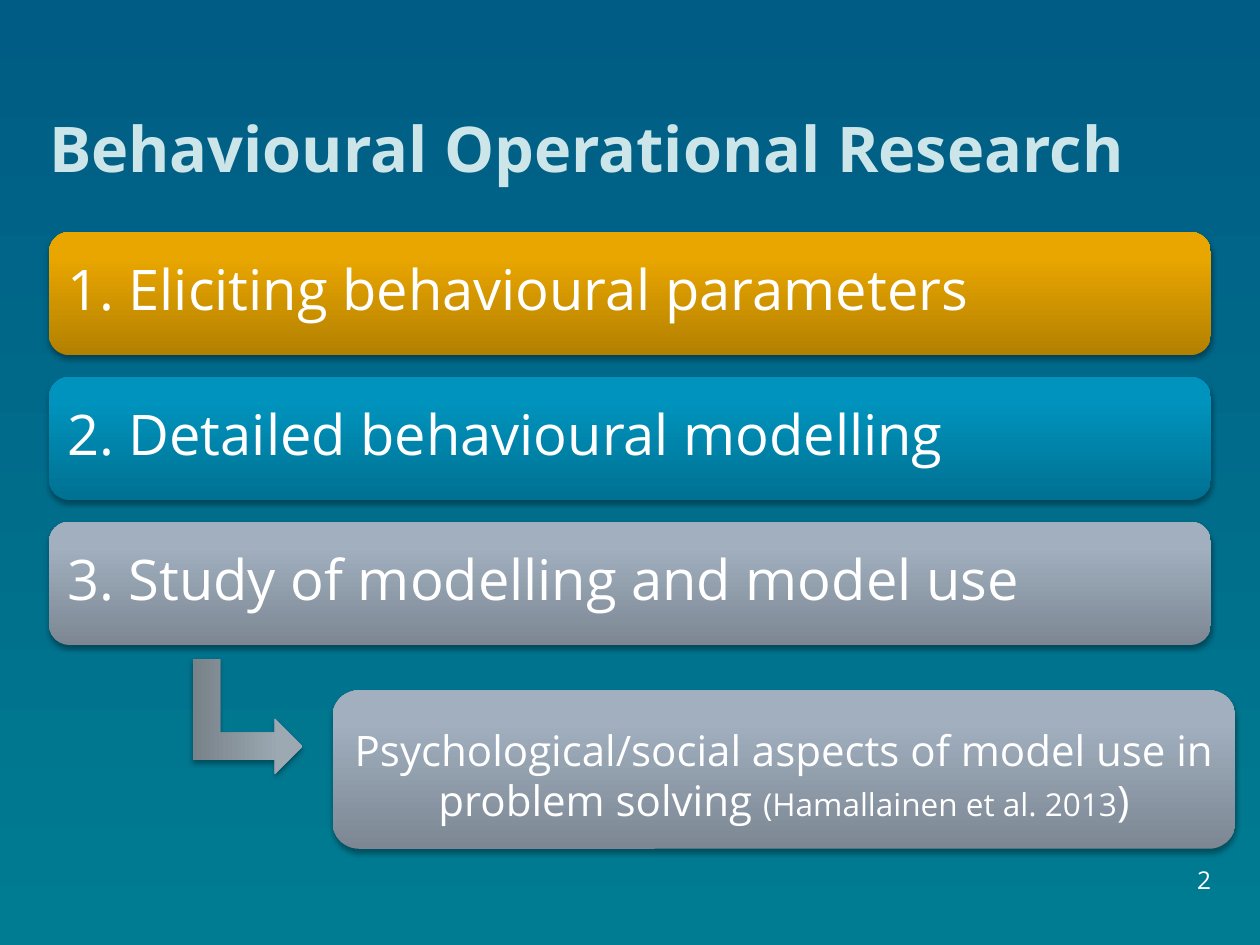
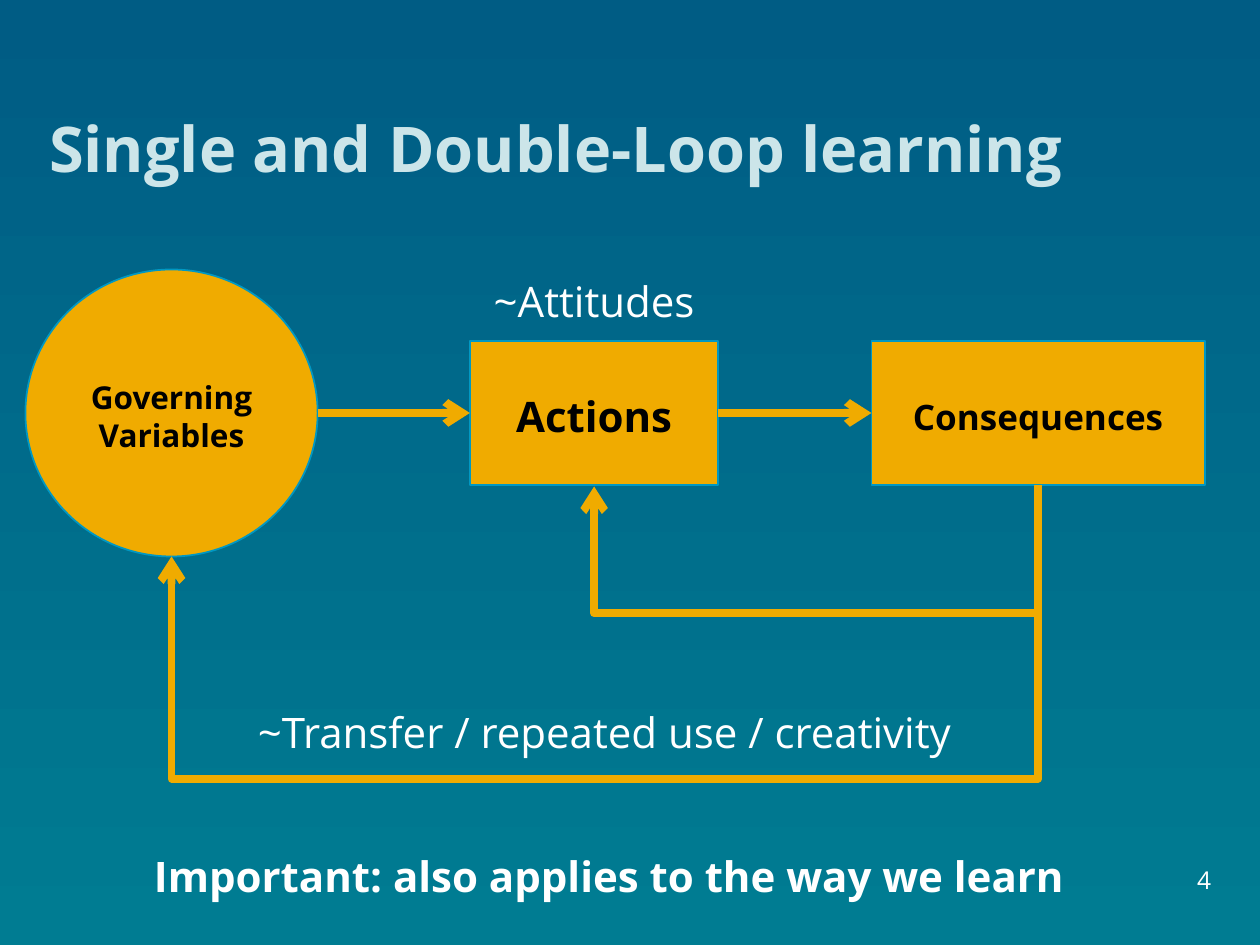
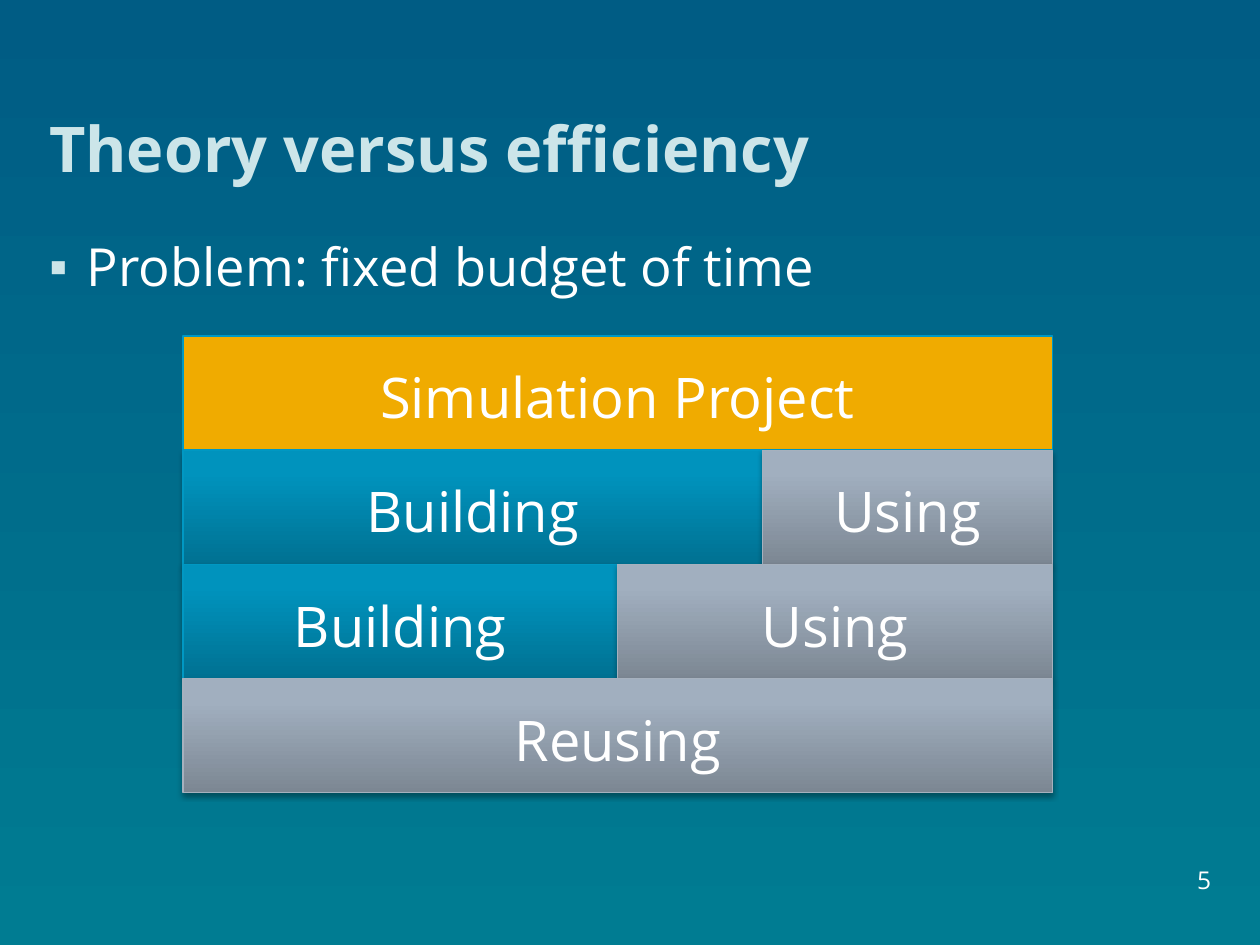
from lxml.etree import SubElement
from pptx import Presentation
from pptx.dml.color import RGBColor
from pptx.enum.shapes import MSO_CONNECTOR, MSO_SHAPE
from pptx.enum.text import MSO_ANCHOR, PP_ALIGN
from pptx.oxml.ns import qn
from pptx.util import Pt

FONT = "Open Sans"
WHITE = RGBColor(0xFF, 0xFF, 0xFF)
BLACK = RGBColor(0x00, 0x00, 0x00)
MIST = RGBColor(0xCC, 0xE5, 0xE9)
AMBER = RGBColor(0xF0, 0xAB, 0x00)
CYAN = RGBColor(0x00, 0x98, 0xC3)
SILVER = RGBColor(0xA6, 0xB1, 0xBE)
BACKDROP = RGBColor(0x00, 0x5C, 0x84), RGBColor(0x00, 0x7C, 0x92)

# Gradients run from the dark bottom edge to the light top
GOLD_FADE = RGBColor(0xB3, 0x80, 0x00), RGBColor(0xE9, 0xA6, 0x00)
BLUE_FADE = RGBColor(0x00, 0x71, 0x92), RGBColor(0x00, 0x93, 0xBD)
GREY_FADE = RGBColor(0x7C, 0x87, 0x93), RGBColor(0xA1, 0xAF, 0xBF)
ARROW_FADE = RGBColor(0x78, 0x82, 0x89), RGBColor(0x9C, 0xA9, 0xB2)

MARGIN, CONTENT_WIDTH = 28, 664
TITLE_ONLY, TITLE_AND_CONTENT = 5, 1
BLOCK_INSETS = (7.2, 3.6, 7.2, 0)
CAPTION_INSETS = (7.2, 3.6, 7.2, 3.6)

THEMES = [
    ("1. Eliciting behavioural parameters", GOLD_FADE),
    ("2. Detailed behavioural modelling", BLUE_FADE),
    ("3. Study of modelling and model use", GREY_FADE),
]
FOCUS = [
    ("Psychological/social aspects of model use in problem solving ", 24),
    ("(Hamallainen et al. 2013", 18),
    (")", 24),
]

# label, size, shape, (left, top, width, height)
LOOP_NODES = [
    ("Governing Variables", 18, MSO_SHAPE.OVAL, (14.5, 154, 167, 164)),
    ("Actions", 24, MSO_SHAPE.RECTANGLE, (268.5, 195, 142, 82)),
    ("Consequences", 20, MSO_SHAPE.RECTANGLE, (498, 195, 190.5, 82)),
]
# text, bold, (left, top, width, height)
LOOP_CAPTIONS = [
    ("~Attitudes", False, (268.5, 154, 142, 36)),
    ("~Transfer / repeated use / creativity", False, (124.5, 400, 442, 36)),
    ("Important: also applies to the way we learn", True, (24, 482.5, 648, 36)),
]
SINGLE_LOOP_DROP, DOUBLE_LOOP_DROP = 74, 168

PROBLEM = "Problem: fixed budget of time"
# each row: label, fill, line, line width, share of the row
BUDGET_ROWS = [
    [("Simulation Project", AMBER, CYAN, 1, 1)],
    [("Building", BLUE_FADE, CYAN, 0.75, 2 / 3), ("Using", GREY_FADE, SILVER, 0.75, 1 / 3)],
    [("Building", BLUE_FADE, CYAN, 0.75, 1 / 2), ("Using", GREY_FADE, SILVER, 0.75, 1 / 2)],
    [("Reusing", GREY_FADE, SILVER, 0.75, 1)],
]


def place(shape, box):
    shape.left, shape.top, shape.width, shape.height = map(Pt, box)


def write(shape, parts, color=WHITE, bold=False, align=PP_ALIGN.CENTER,
          anchor=MSO_ANCHOR.MIDDLE, insets=(0, 0, 0, 0)):
    """Fill the shape with one paragraph made of (text, size) parts."""
    frame = shape.text_frame
    frame.word_wrap = True
    frame.vertical_anchor = anchor
    (frame.margin_left, frame.margin_top,
     frame.margin_right, frame.margin_bottom) = map(Pt, insets)
    paragraph = frame.paragraphs[0]
    paragraph.alignment = align
    for text, size in parts:
        run = paragraph.add_run()
        run.text = text
        run.font.name, run.font.size, run.font.bold = FONT, Pt(size), bold
        run.font.color.rgb = color


def fade(fill, colors, angle, end=1):
    fill.gradient()
    fill.gradient_angle = angle
    for stop, color, position in zip(fill.gradient_stops, colors, (0, end)):
        stop.color.rgb = color
        stop.position = position


def cast_shadow(shape):
    effects = shape._element.spPr.find(qn("a:effectLst"))
    shadow = SubElement(effects, qn("a:outerShdw"), blurRad=str(Pt(3.1)),
                        dist=str(Pt(1.8)), dir="5400000", rotWithShape="0")
    color = SubElement(shadow, qn("a:srgbClr"), val="000000")
    SubElement(color, qn("a:alpha"), val="35000")


def add_block(slide, kind, box, fill, line=None, line_width=1):
    """Add a shape: a plain colour lies flat, a fade casts a shadow."""
    block = slide.shapes.add_shape(kind, *map(Pt, box))
    block.shadow.inherit = False
    if isinstance(fill, RGBColor):
        block.fill.solid()
        block.fill.fore_color.rgb = fill
    else:
        fade(block.fill, fill, 90, 0.8)
        cast_shadow(block)
    if line is None:
        block.line.fill.background()
    else:
        block.line.color.rgb = line
        block.line.width = Pt(line_width)
    return block


def add_caption(slide, text, size, box, **style):
    caption = slide.shapes.add_textbox(*map(Pt, box))
    write(caption, [(text, size)], **style)


def add_arrow(slide, kind, start, end):
    arrow = slide.shapes.add_connector(kind, *map(Pt, (*start, *end)))
    arrow.line.color.rgb = AMBER
    arrow.line.width = Pt(4.5)
    SubElement(arrow.line._get_or_add_ln(), qn("a:tailEnd"), type="arrow")
    SubElement(arrow._element.spPr, qn("a:effectLst"))
    return arrow


def add_loop(slide, start, end, drop):
    """Lead an arrow down by drop, left, and up to the end point."""
    rise, span = end[1] - start[1], start[0] - end[0]
    x, y = (start[0] + end[0]) / 2, (start[1] + end[1]) / 2
    loop = add_arrow(slide, MSO_CONNECTOR.ELBOW, (x - rise / 2, y - span / 2),
                     (x + rise / 2, y + span / 2))
    properties = loop._element.spPr
    properties.find(qn("a:xfrm")).set("rot", "5400000")
    adjustments = properties.find(qn("a:prstGeom")).find(qn("a:avLst"))
    SubElement(adjustments, qn("a:gd"), name="adj1",
               fmla=f"val {round(drop / rise * 100000)}")


def add_slide(deck, title, number, layout=TITLE_ONLY):
    slide = deck.slides.add_slide(deck.slide_layouts[layout])
    place(slide.shapes.title, (MARGIN, 0, CONTENT_WIDTH, 106))
    write(slide.shapes.title, [(title, 36)], MIST, True, PP_ALIGN.LEFT, MSO_ANCHOR.BOTTOM)
    add_caption(slide, number, 14, (541.5, 497, 150.5, 14.4),
                align=PP_ALIGN.RIGHT, anchor=MSO_ANCHOR.BOTTOM)
    return slide


def build_research(deck):
    slide = add_slide(deck, "Behavioural Operational Research", "2")
    for index, (theme, colors) in enumerate(THEMES):
        box = (MARGIN, 132.5 + index * 82.8, CONTENT_WIDTH, 70.5)
        card = add_block(slide, MSO_SHAPE.ROUNDED_RECTANGLE, box, colors)
        write(card, [(theme, 32)], align=PP_ALIGN.LEFT, insets=(7.2, 0, 7.2, 6))
    arrow = add_block(slide, MSO_SHAPE.BENT_UP_ARROW, (108.7, 378, 65.5, 62.6), ARROW_FADE)
    arrow.rotation = 90
    focus = add_block(slide, MSO_SHAPE.ROUNDED_RECTANGLE, (190, 394.5, 516, 90.5), GREY_FADE)
    write(focus, FOCUS, insets=(7.2, 5.8, 7.2, 0))


def build_learning(deck):
    slide = add_slide(deck, "Single and Double-Loop learning", "4")
    for label, size, kind, box in LOOP_NODES:
        node = add_block(slide, kind, box, AMBER, CYAN)
        write(node, [(label, size)], BLACK, True, insets=BLOCK_INSETS)

    boxes = [box for *_, box in LOOP_NODES]
    for (left, top, width, height), target in zip(boxes, boxes[1:]):
        middle = top + height / 2
        add_arrow(slide, MSO_CONNECTOR.STRAIGHT, (left + width, middle), (target[0], middle))

    variables, actions, consequences = [
        (left + width / 2, top + height) for left, top, width, height in boxes]
    # The elbow needs some height, so the inner loop ends one point lower
    add_loop(slide, consequences, (actions[0], actions[1] + 1), SINGLE_LOOP_DROP)
    add_loop(slide, consequences, variables, DOUBLE_LOOP_DROP)
    for text, bold, box in LOOP_CAPTIONS:
        add_caption(slide, text, 24, box, bold=bold, insets=CAPTION_INSETS)


def build_efficiency(deck):
    slide = add_slide(deck, "Theory versus efficiency", "5", TITLE_AND_CONTENT)
    problem = slide.placeholders[1]
    place(problem, (MARGIN, 134, CONTENT_WIDTH, 354))
    write(problem, [(PROBLEM, 30)], align=PP_ALIGN.LEFT, anchor=MSO_ANCHOR.TOP)
    paragraph = problem.text_frame.paragraphs[0]
    paragraph.space_before = Pt(0)
    properties = paragraph._p.get_or_add_pPr()
    properties.set("marL", str(Pt(21.6)))
    properties.set("indent", str(-Pt(21.6)))
    bullet_color = SubElement(properties, qn("a:buClr"))
    SubElement(bullet_color, qn("a:srgbClr"), val=str(MIST))
    SubElement(properties, qn("a:buChar"), char="▪")

    row_height, stack_width = 65.2, 497
    for index, row in enumerate(BUDGET_ROWS):
        left = 104.5
        for label, fill, line, line_width, share in row:
            width = stack_width * share
            box = (left, 192.2 + index * row_height, width, row_height)
            block = add_block(slide, MSO_SHAPE.RECTANGLE, box, fill, line, line_width)
            write(block, [(label, 32)], insets=BLOCK_INSETS)
            left += width


def main():
    deck = Presentation()
    deck.slide_width, deck.slide_height = Pt(720), Pt(540)
    fade(deck.slide_master.background.fill, BACKDROP, 270)
    build_research(deck)
    build_learning(deck)
    build_efficiency(deck)
    deck.save("out.pptx")


if __name__ == "__main__":
    main()
